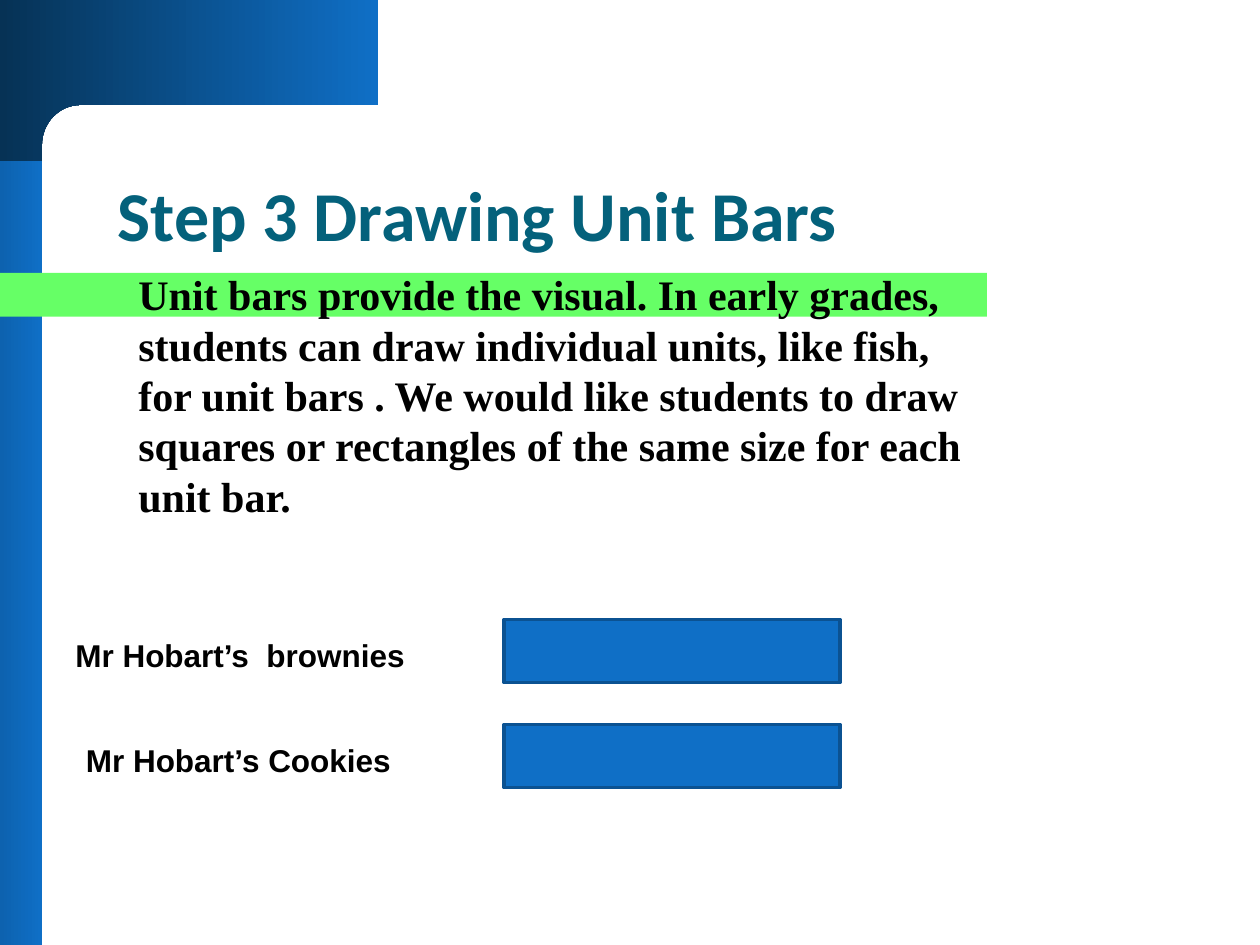
from math import cos, pi, sin

from pptx import Presentation
from pptx.dml.color import RGBColor
from pptx.enum.shapes import MSO_SHAPE
from pptx.enum.text import MSO_ANCHOR, PP_ALIGN
from pptx.util import Pt

RECTANGLE = MSO_SHAPE.RECTANGLE
BOTTOM, TOP = MSO_ANCHOR.BOTTOM, MSO_ANCHOR.TOP
LEFT = PP_ALIGN.LEFT

COLOURS = {
    "navy": "063255",
    "deep blue": "0D62AF",
    "blue": "0F6FC6",
    "bar line": "0B5292",
    "green": "66FF66",
    "title": "04617B",
    "text": "000000",
}
TITLE_FONT = {"name": "Calibri", "size": Pt(40), "bold": True}
BODY_FONT = {"name": "Times New Roman", "size": Pt(24), "bold": True}
LABEL_FONT = {"name": "Arial", "size": Pt(18), "bold": True}

BODY = (
    "Unit bars provide the visual. In early grades, students can draw "
    "individual units, like fish, for unit bars . We would like students to "
    "draw squares or rectangles of the same size for each unit bar."
)
BAR_TOP, BAR_STEP = 354, 60
# label, left, top offset from its bar, width, height, wrapped
UNIT_BARS = [
    ("Mr Hobart’s  brownies", 36, 6, 216, 51, True),
    ("Mr Hobart’s Cookies", 42, 6, 191, 29, False),
]


def colour(name):
    return RGBColor.from_string(COLOURS[name])


def fill_gradient(shape, first, last):
    """Blend from left to right, without an outline."""
    shape.fill.gradient()
    shape.fill.gradient_angle = 0
    for stop, name in zip(shape.fill.gradient_stops, (first, last)):
        stop.color.rgb = colour(name)
    shape.line.fill.background()
    shape.shadow.inherit = False


def add_rectangle(page, left, top, width, height, fill, line=None):
    shape = page.shapes.add_shape(
        RECTANGLE, Pt(left), Pt(top), Pt(width), Pt(height))
    shape.shadow.inherit = False
    shape.fill.solid()
    shape.fill.fore_color.rgb = colour(fill)
    if line:
        shape.line.color.rgb = colour(line)
        shape.line.width = Pt(2)
    else:
        shape.line.fill.background()
    return shape


def add_corner(page):
    """Top band whose lower edge curves into the side band."""
    centre_x, centre_y, radius_x, radius_y = 46, 83, 22, 23
    steps = 16
    curve = [
        (centre_x - radius_x * sin(pi / 2 * step / steps),
         centre_y - radius_y * cos(pi / 2 * step / steps))
        for step in range(steps + 1)
    ]
    points = [(216, 0), (216, 60), *curve, (24, 92), (0, 92)]
    builder = page.shapes.build_freeform(0, 0)
    builder.add_line_segments([(Pt(x), Pt(y)) for x, y in points])
    fill_gradient(builder.convert_to_shape(), "navy", "blue")


def write(frame, text, font, font_colour, anchor=TOP):
    frame.vertical_anchor = anchor
    para = frame.paragraphs[0]
    para.alignment = LEFT
    span = para.add_run()
    span.text = text
    for key, value in font.items():
        setattr(span.font, key, value)
    span.font.color.rgb = colour(font_colour)
    return para


def add_text(page, text, left, top, width, height, font, wrap=True):
    box = page.shapes.add_textbox(Pt(left), Pt(top), Pt(width), Pt(height))
    box.text_frame.word_wrap = wrap
    write(box.text_frame, text, font, "text")


def add_title(page, text):
    title = page.shapes.title
    place = {"left": 60, "top": 60, "width": 624, "height": 90}
    for key, value in place.items():
        setattr(title, key, Pt(value))
    para = write(title.text_frame, text, TITLE_FONT, "title", BOTTOM)
    para.line_spacing = 0.9


def main():
    deck = Presentation()
    deck.slide_width, deck.slide_height = Pt(720), Pt(540)
    page = deck.slides.add_slide(deck.slide_layouts[5])

    side_band = add_rectangle(page, 0, 0, 24, 540, "blue")
    fill_gradient(side_band, "deep blue", "blue")
    add_corner(page)
    add_rectangle(page, 0, 156, 564, 25, "green")

    add_title(page, "Step 3 Drawing Unit Bars")
    add_text(page, BODY, 72, 150, 486, 153, BODY_FONT)
    for row, (label, left, offset, width, height, wrap) in enumerate(UNIT_BARS):
        top = BAR_TOP + row * BAR_STEP
        add_rectangle(page, 288, top, 192, 36, "blue", "bar line")
        add_text(page, label, left, top + offset, width, height, LABEL_FONT, wrap)

    deck.save("out.pptx")


if __name__ == "__main__":
    main()
